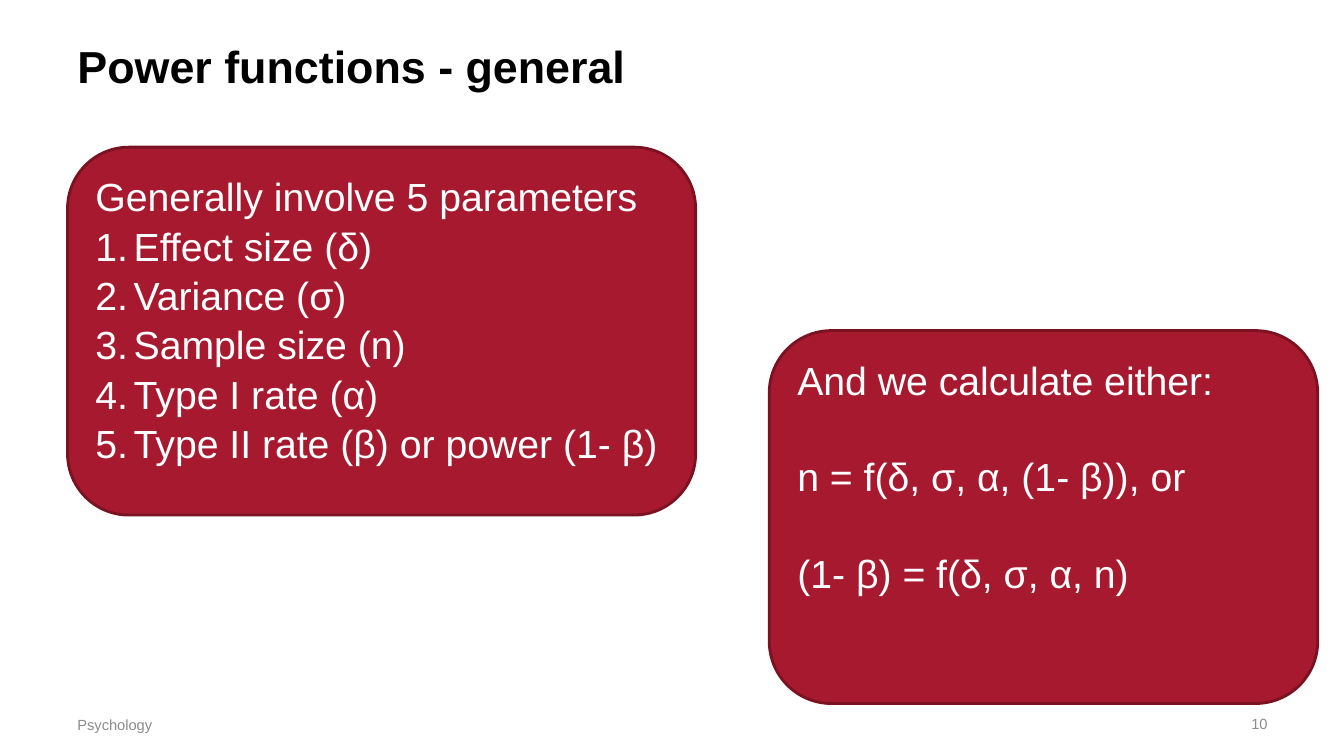
from dataclasses import dataclass

import lxml.etree
import pptx
import pptx.dml.color
import pptx.enum.shapes
import pptx.enum.text
import pptx.oxml.ns
import pptx.slide
import pptx.text.text
import pptx.util

Inches = pptx.util.Inches
Pt = pptx.util.Pt
RGB = pptx.dml.color.RGBColor
Align = pptx.enum.text.PP_ALIGN
Anchor = pptx.enum.text.MSO_ANCHOR


@dataclass(frozen=True)
class Theme:
    font: str = "Arial"
    ink: RGB = RGB(0x00, 0x00, 0x00)
    muted: RGB = RGB(0x8C, 0x8C, 0x8C)
    on_card: RGB = RGB(0xFF, 0xFF, 0xFF)
    card: RGB = RGB(0xA6, 0x19, 0x2E)
    card_edge: RGB = RGB(0x7B, 0x12, 0x22)
    title_size: float = 32
    body_size: float = 28
    footer_size: float = 10.5
    edge_width: float = 2
    line_spacing: float = 1.05
    statement_gap: float = 33.7
    number_indent: float = 0.38


THEME = Theme()


@dataclass(frozen=True)
class Box:
    left: float
    top: float
    width: float
    height: float

    def lengths(self) -> list[int]:
        return [Inches(v) for v in (self.left, self.top, self.width, self.height)]


@dataclass(frozen=True)
class Label:
    text: str
    box: Box
    size: float
    color: RGB
    bold: bool = False
    align: Align = Align.LEFT


@dataclass(frozen=True)
class Line:
    text: str
    numbered: bool = False
    gap: float = 0


@dataclass(frozen=True)
class Card:
    box: Box
    lines: list[Line]


def apply_format(target: object, values: dict[str, object]) -> None:
    for name, value in values.items():
        setattr(target, name, value)


def set_font(paragraph: pptx.text.text._Paragraph, size: float, color: RGB, bold: bool = False) -> None:
    font = paragraph.runs[0].font
    apply_format(font, {"name": THEME.font, "size": Pt(size), "bold": bold})
    font.color.rgb = color


def number(paragraph: pptx.text.text._Paragraph) -> None:
    """Give the paragraph an automatic number with a hanging indent."""
    properties = paragraph._p.get_or_add_pPr()
    indent = Inches(THEME.number_indent)
    properties.set("marL", str(indent))
    properties.set("indent", str(-indent))
    bullet_font = lxml.etree.SubElement(properties, pptx.oxml.ns.qn("a:buFont"))
    bullet_font.set("typeface", THEME.font)
    bullet = lxml.etree.SubElement(properties, pptx.oxml.ns.qn("a:buAutoNum"))
    bullet.set("type", "arabicPeriod")


def draw_label(slide: pptx.slide.Slide, label: Label) -> None:
    frame = slide.shapes.add_textbox(*label.box.lengths()).text_frame
    apply_format(frame, {"word_wrap": True, "vertical_anchor": Anchor.MIDDLE})
    paragraph = frame.paragraphs[0]
    apply_format(paragraph, {"text": label.text, "alignment": label.align})
    set_font(paragraph, label.size, label.color, label.bold)


def draw_card(slide: pptx.slide.Slide, card: Card) -> None:
    panel = slide.shapes.add_shape(
        pptx.enum.shapes.MSO_SHAPE.ROUNDED_RECTANGLE, *card.box.lengths()
    )
    panel.shadow.inherit = False
    panel.fill.solid()
    panel.fill.fore_color.rgb = THEME.card
    panel.line.color.rgb = THEME.card_edge
    panel.line.width = Pt(THEME.edge_width)

    frame = panel.text_frame
    apply_format(frame, {"word_wrap": True, "vertical_anchor": Anchor.TOP})
    for index, line in enumerate(card.lines):
        paragraph = frame.add_paragraph() if index else frame.paragraphs[0]
        if line.numbered:
            number(paragraph)
        apply_format(paragraph, {
            "text": line.text,
            "alignment": Align.LEFT,
            "line_spacing": THEME.line_spacing,
            "space_before": Pt(line.gap),
        })
        set_font(paragraph, THEME.body_size, THEME.on_card)


# Title and footer
LABELS = [
    Label("Power functions - general", Box(0.67, 0.3, 9.34, 0.71),
          THEME.title_size, THEME.ink, bold=True),
    Label("Psychology", Box(0.67, 6.99, 5.88, 0.4), THEME.footer_size, THEME.muted),
    Label("10", Box(9.56, 6.98, 3.11, 0.4), THEME.footer_size, THEME.muted,
          align=Align.RIGHT),
]

# Parameters and the quantities calculated from them
PARAMETERS = [
    "Effect size (δ)",
    "Variance (σ)",
    "Sample size (n)",
    "Type I rate (α)",
    "Type II rate (β) or power (1- β)",
]
FORMULAS = ["n = f(δ, σ, α, (1- β)), or", "(1- β) = f(δ, σ, α, n)"]
CARDS = [
    Card(Box(0.67, 1.46, 6.23, 3.65),
         [Line("Generally involve 5 parameters")]
         + [Line(name, numbered=True) for name in PARAMETERS]),
    Card(Box(7.63, 3.28, 5.44, 3.7),
         [Line("And we calculate either:")]
         + [Line(formula, gap=THEME.statement_gap) for formula in FORMULAS]),
]


def main() -> None:
    deck = pptx.Presentation()
    apply_format(deck, {"slide_width": Inches(13.33), "slide_height": Inches(7.5)})
    slide = deck.slides.add_slide(deck.slide_layouts[6])
    for label in LABELS:
        draw_label(slide, label)
    for card in CARDS:
        draw_card(slide, card)
    deck.save("out.pptx")


if __name__ == "__main__":
    main()
